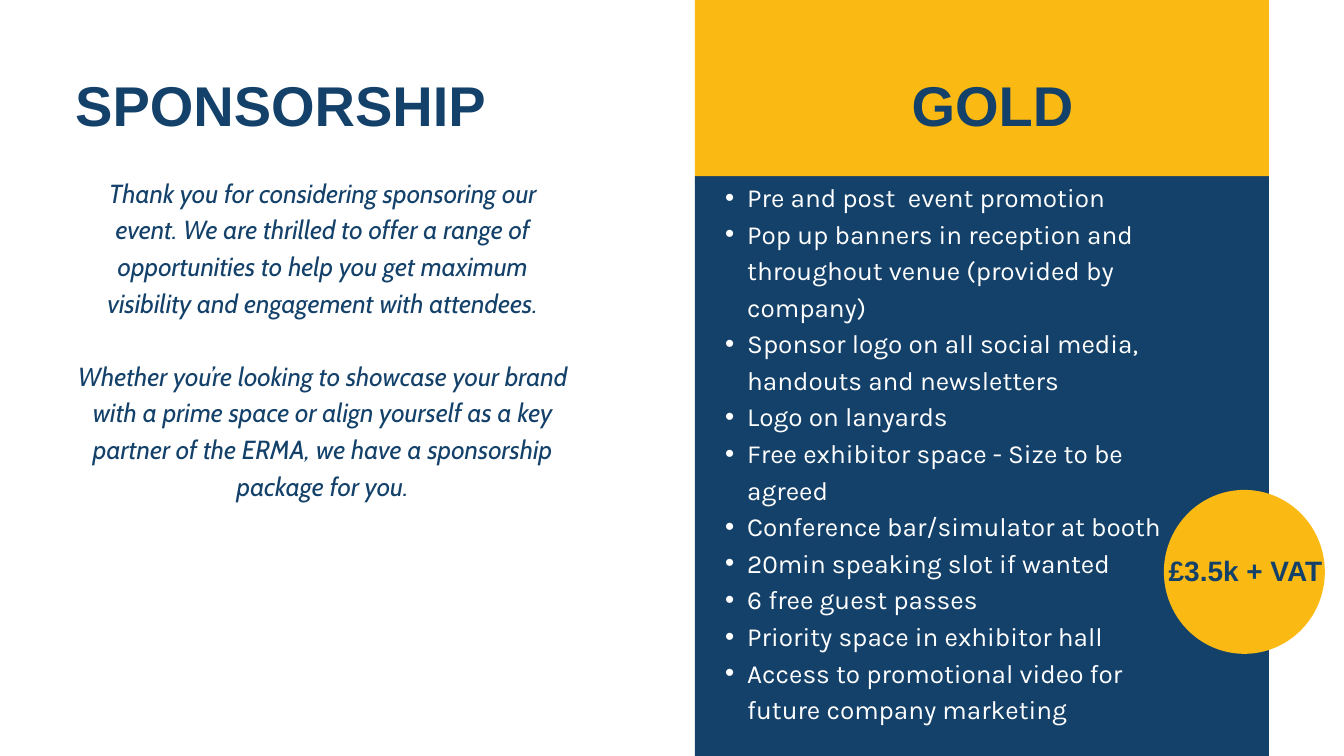
from dataclasses import dataclass

from lxml import etree
from pptx import Presentation
from pptx.dml.color import RGBColor
from pptx.enum.shapes import MSO_SHAPE
from pptx.enum.text import MSO_AUTO_SIZE, PP_ALIGN
from pptx.oxml.ns import qn
from pptx.util import Pt

RECTANGLE, OVAL = MSO_SHAPE.RECTANGLE, MSO_SHAPE.OVAL
LEFT, CENTER = PP_ALIGN.LEFT, PP_ALIGN.CENTER
GROW = MSO_AUTO_SIZE.SHAPE_TO_FIT_TEXT


@dataclass(frozen=True)
class Theme:
    navy: RGBColor = RGBColor(0x14, 0x41, 0x6A)
    gold: RGBColor = RGBColor(0xFB, 0xB9, 0x13)
    white: RGBColor = RGBColor(0xFF, 0xFF, 0xFF)
    heading_font: str = "Arial"
    intro_font: str = "Cabin"
    list_font: str = "Karla"
    title_size: float = 60
    price_size: float = 30
    body_size: float = 28
    title_leading: float = 61.2
    price_leading: float = 42
    body_leading: float = 39.2


theme = Theme()
deck = Presentation()
deck.slide_width, deck.slide_height = Pt(1440), Pt(810)
page = deck.slides.add_slide(deck.slide_layouts[6])


def add_panel(kind, left, top, width, height, color):
    panel = page.shapes.add_shape(kind, Pt(left), Pt(top), Pt(width), Pt(height))
    panel.shadow.inherit = False
    panel.fill.solid()
    panel.fill.fore_color.rgb = color
    panel.line.fill.background()


def add_text(bounds, lines, font, size, leading, color, align=CENTER, bold=False, italic=False):
    box = page.shapes.add_textbox(*[Pt(length) for length in bounds])
    frame = box.text_frame
    frame.margin_left = frame.margin_top = frame.margin_right = frame.margin_bottom = 0
    frame.word_wrap = True
    frame.auto_size = GROW
    frame.text = "\n".join(lines)
    for para in frame.paragraphs:
        para.alignment = align
        para.line_spacing = Pt(leading)
        for span in para.runs:
            span.font.name = font
            span.font.size = Pt(size)
            span.font.bold = bold
            span.font.italic = italic
            span.font.color.rgb = color
    return frame.paragraphs


panel_left, panel_width, header_bottom = 744.5, 615, 188.7
title_top, title_height = 86.4, 66.2
title_style = (theme.heading_font, theme.title_size, theme.title_leading, theme.navy)

add_text((80.6, title_top, 893.5, title_height), ["SPONSORSHIP"], *title_style, align=LEFT, bold=True)

add_panel(RECTANGLE, panel_left, header_bottom, panel_width, 644, theme.navy)
add_panel(RECTANGLE, panel_left, -25.2, panel_width, header_bottom + 25.2, theme.gold)
add_panel(OVAL, 1247, 524.9, 172.5, 175.7, theme.gold)

intro = [
    "Thank you for considering sponsoring our event. We are thrilled to offer a range of "
    "opportunities to help you get maximum visibility and engagement with attendees.",
    "Whether you’re looking to showcase your brand with a prime space or align yourself as a key "
    "partner of the ERMA, we have a sponsorship package for you.",
]
intro_paras = add_text((80.6, 184.3, 530, 427.7), intro, theme.intro_font, theme.body_size,
                       theme.body_leading, theme.navy, italic=True)
intro_paras[1].space_before = Pt(theme.body_leading)

add_text((919.4, title_top, 288, title_height), ["GOLD"], *title_style, bold=True)

benefits = [
    "Pre and post  event promotion",
    "Pop up banners in reception and throughout venue (provided by company)",
    "Sponsor logo on all social media, handouts and newsletters",
    "Logo on lanyards",
    "Free exhibitor space - Size to be agreed",
    "Conference bar/simulator at booth",
    "20min speaking slot if wanted",
    "6 free guest passes",
    "Priority space in exhibitor hall",
    "Access to promotional video for future company marketing",
]
benefit_paras = add_text((753.1, header_bottom, 526.3, 584), benefits, theme.list_font,
                         theme.body_size, theme.body_leading, theme.white, align=LEFT)
for para in benefit_paras:
    para.level = 1
    properties = para._p.get_or_add_pPr()
    properties.set("marL", str(Pt(47.5)))
    properties.set("indent", str(Pt(-23.75)))
    etree.SubElement(properties, qn("a:buFont"), typeface="Arial")
    etree.SubElement(properties, qn("a:buChar"), char="•")

add_text((1249.9, 587.5, 169.2, 42.5), ["£3.5k + VAT"], theme.heading_font, theme.price_size,
         theme.price_leading, theme.navy, bold=True)

deck.save("out.pptx")
